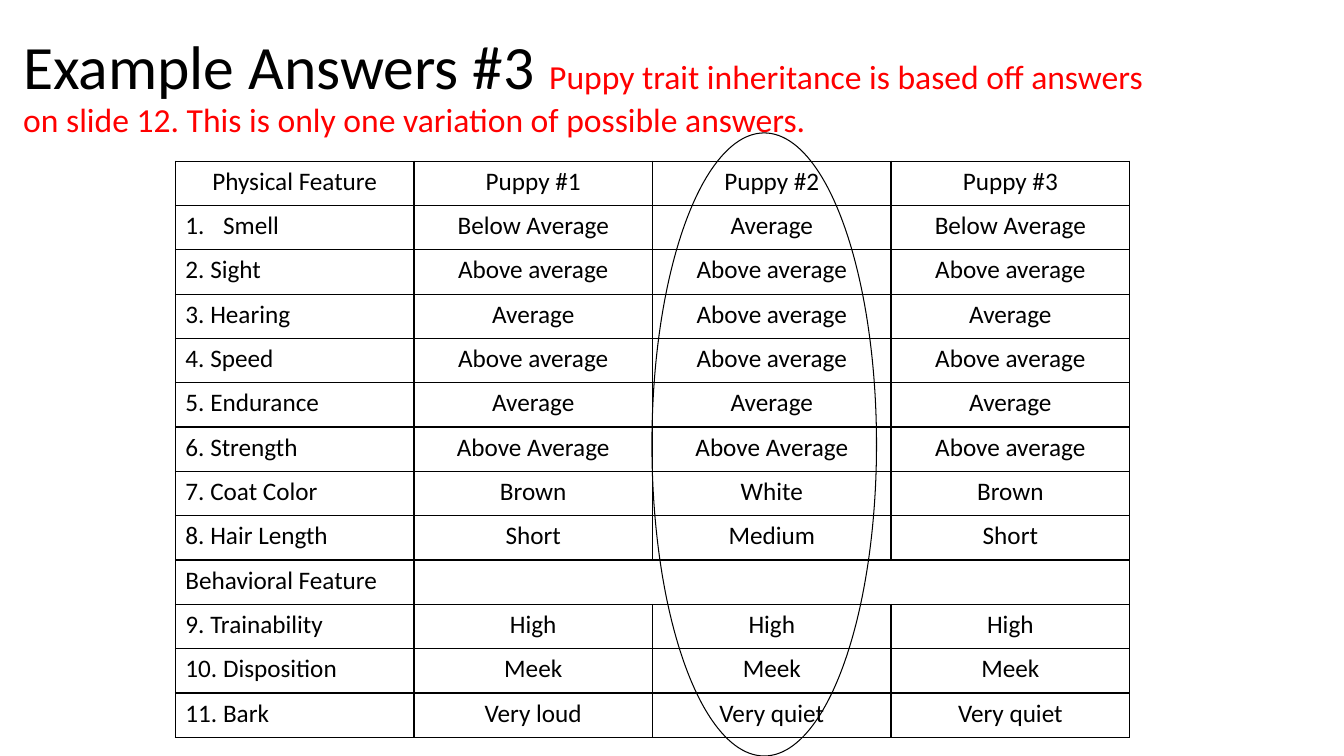
from lxml.etree import SubElement
from pptx import Presentation
from pptx.dml.color import RGBColor
from pptx.enum.shapes import MSO_SHAPE
from pptx.enum.text import MSO_ANCHOR, MSO_AUTO_SIZE, PP_ALIGN
from pptx.oxml.ns import qn
from pptx.util import Cm, Pt

FONT = "Calibri"
BLACK, RED = "000000", "FF0000"

TITLE_RUNS = [
    ("Example Answers #3 ", 44, BLACK),
    ("Puppy trait inheritance is based off answers on slide 12. "
     "This is only one variation of possible answers.", 24, RED),
]
HEADER = ("Physical Feature", "Puppy #1", "Puppy #2", "Puppy #3")
NUMBERED_ROW = ("Smell", "Below Average", "Average", "Below Average")
SECTION_ROW = ("Behavioral Feature",)
ROWS = [
    HEADER,
    NUMBERED_ROW,
    ("2. Sight", "Above average", "Above average", "Above average"),
    ("3. Hearing", "Average", "Above average", "Average"),
    ("4. Speed", "Above average", "Above average", "Above average"),
    ("5. Endurance", "Average", "Average", "Average"),
    ("6. Strength", "Above Average", "Above Average", "Above average"),
    ("7. Coat Color", "Brown", "White", "Brown"),
    ("8. Hair Length", "Short", "Medium", "Short"),
    SECTION_ROW,
    ("9. Trainability", "High", "High", "High"),
    ("10. Disposition", "Meek", "Meek", "Meek"),
    ("11. Bark", "Very loud", "Very quiet", "Very quiet"),
]
TITLE_BOX = (Cm(0.33), Cm(0.38), Cm(29.21), Cm(3.68))
TABLE_BOX = (Cm(4.42), Cm(4.06), Cm(24.05), Cm(14.53))
OVAL_BOX = (Cm(16.43), Cm(3.35), Cm(5.66), Cm(15.7))


def color(hex_string):
    return RGBColor.from_string(hex_string)


def add_run(paragraph, text, size, hex_string):
    run = paragraph.add_run()
    run.text = text
    run.font.name = FONT
    run.font.size = Pt(size)
    run.font.color.rgb = color(hex_string)


def add_borders(cell):
    properties = cell._tc.get_or_add_tcPr()
    for side in ("a:lnL", "a:lnR", "a:lnT", "a:lnB"):
        line = SubElement(properties, qn(side), w=str(Pt(1)))
        fill = SubElement(line, qn("a:solidFill"))
        SubElement(fill, qn("a:srgbClr"), val=BLACK)


def number_paragraph(paragraph):
    """Turn on automatic 1. 2. 3. numbering with a hanging indent."""
    properties = paragraph._p.get_or_add_pPr()
    properties.set("marL", str(Cm(0.95)))
    properties.set("indent", str(-Cm(0.95)))
    SubElement(properties, qn("a:buFont"), typeface="+mj-lt")
    SubElement(properties, qn("a:buAutoNum"), type="arabicPeriod")


def add_title(slide):
    title = slide.shapes.title
    title.left, title.top, title.width, title.height = TITLE_BOX
    frame = title.text_frame
    frame.word_wrap = True
    frame.auto_size = MSO_AUTO_SIZE.NONE
    frame.vertical_anchor = MSO_ANCHOR.MIDDLE
    paragraph = frame.paragraphs[0]
    paragraph.alignment = PP_ALIGN.LEFT
    paragraph.line_spacing = 0.9
    for text, size, hex_string in TITLE_RUNS:
        add_run(paragraph, text, size, hex_string)


def add_trait_table(slide):
    table = slide.shapes.add_table(len(ROWS), len(HEADER), *TABLE_BOX).table
    table.first_row = table.horz_banding = False
    for row_index, row in enumerate(ROWS):
        for column_index in range(len(HEADER)):
            cell = table.cell(row_index, column_index)
            add_borders(cell)
            cell.fill.background()
            if column_index >= len(row):
                continue
            paragraph = cell.text_frame.paragraphs[0]
            centered = row is HEADER or column_index > 0
            paragraph.alignment = PP_ALIGN.CENTER if centered else PP_ALIGN.LEFT
            if row is NUMBERED_ROW and column_index == 0:
                number_paragraph(paragraph)
            add_run(paragraph, row[column_index], 18, BLACK)
    section = ROWS.index(SECTION_ROW)
    table.cell(section, 1).merge(table.cell(section, len(HEADER) - 1))


def add_highlight_oval(slide):
    oval = slide.shapes.add_shape(MSO_SHAPE.OVAL, *OVAL_BOX)
    oval.shadow.inherit = False
    oval.fill.background()
    oval.line.color.rgb = color(BLACK)
    oval.line.width = Pt(0.75)


def main():
    presentation = Presentation()
    presentation.slide_width, presentation.slide_height = Cm(33.87), Cm(19.05)
    slide = presentation.slides.add_slide(presentation.slide_layouts[5])
    add_title(slide)
    add_trait_table(slide)
    add_highlight_oval(slide)
    presentation.save("out.pptx")


if __name__ == "__main__":
    main()
